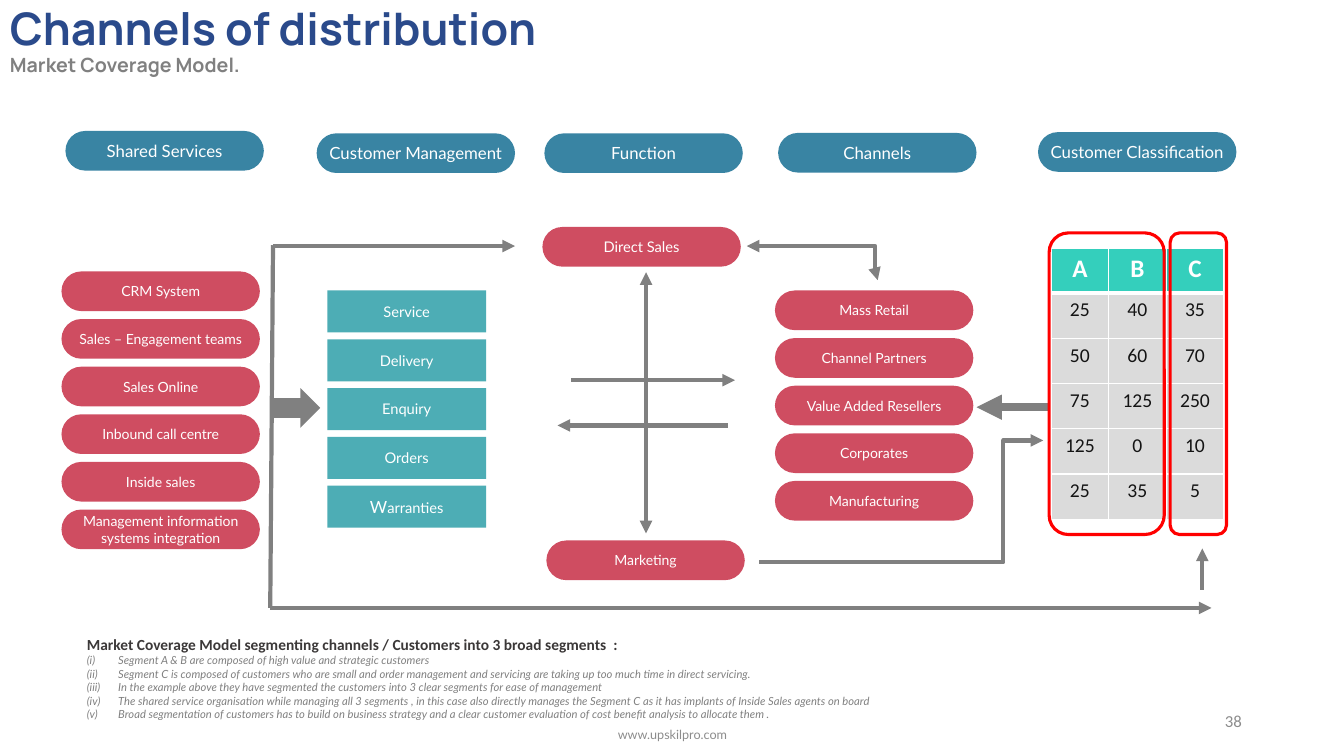
from lxml import etree
from pptx import Presentation
from pptx.dml.color import RGBColor
from pptx.enum.shapes import MSO_CONNECTOR, MSO_SHAPE
from pptx.enum.text import MSO_ANCHOR, PP_ALIGN
from pptx.oxml.ns import qn
from pptx.util import Cm, Pt

LEFT, CENTER, RIGHT = PP_ALIGN.LEFT, PP_ALIGN.CENTER, PP_ALIGN.RIGHT
TOP, MIDDLE = MSO_ANCHOR.TOP, MSO_ANCHOR.MIDDLE
ROUNDED, RECT, BLOCK_ARROW = (MSO_SHAPE.ROUNDED_RECTANGLE, MSO_SHAPE.RECTANGLE,
                              MSO_SHAPE.RIGHT_ARROW)
STRAIGHT, ELBOW = MSO_CONNECTOR.STRAIGHT, MSO_CONNECTOR.ELBOW

# Content (lengths in cm)
TITLE = "Channels of distribution"
SUBTITLE = "Market Coverage Model."
HEADERS = [("Shared Services", 1.65, 3.3), ("Customer Management", 7.98, 3.36),
           ("Function", 13.72, 3.36), ("Channels", 19.61, 3.35),
           ("Customer Classification", 26.16, 3.33)]
SERVICES = ["CRM System", "Sales – Engagement teams", "Sales Online",
            "Inbound call centre", "Inside sales",
            "Management information systems integration"]
CHANNELS = ["Mass Retail", "Channel Partners", "Value Added Resellers",
            "Corporates", "Manufacturing"]
MANAGEMENT = [["Service"], ["Delivery"], ["Enquiry"], ["Orders"], ["W", "arranties"]]
CLASSES = [["A", "B", "C"], [25, 40, 35], [50, 60, 70], [75, 125, 250],
           [125, 0, 10], [25, 35, 5]]
SEGMENT_FRAMES = [(26.44, 2.9), (29.49, 1.42)]  # left, width
NOTES_HEAD = "Market Coverage Model segmenting channels / Customers into 3 broad segments  :"
NOTES = [
    "Segment A & B are composed of high value and strategic customers",
    "Segment C is composed of customers who are small and order management and "
    "servicing are taking up too much time in direct servicing.",
    "In the example above they have segmented the customers into 3 clear segments "
    "for ease of management",
    "The shared service organisation while managing all 3 segments , in this case also "
    "directly manages the Segment C as it has implants of Inside Sales agents on board",
    "Broad segmentation of customers has to build on business strategy and a clear "
    "customer evaluation of cost benefit analysis to allocate them .",
]
# start, end, arrowheads, width in points
LINES = [
    ((6.88, 6.18), (6.81, 15.32), "", 3),
    ((6.88, 6.2), (12.98, 6.2), "tail", 3),
    ((6.81, 15.32), (30.53, 15.32), "tail", 3),
    ((18.34, 10.72), (14.05, 10.72), "tail", 3),
    ((14.4, 9.58), (18.52, 9.58), "tail", 3),
    ((16.28, 13.44), (16.28, 6.86), "head tail", 3),
    ((30.3, 14.86), (30.3, 13.82), "tail", 3),
    ((26.44, 10.26), (24.61, 10.26), "tail", 6),
]
# start, end, arrowheads, place of the bend
ELBOWS = [
    ((18.82, 6.2), (22.12, 7.06), "head tail", 0.98),
    ((19.13, 14.17), (26.29, 11.1), "tail", 0.86),
]

# Theme
FILL = dict(header="3984A3", pill="CF4D61", box="4DADB5", arrow="808080",
            frame="FF0000", class_head="23CBB7", class_cell="D9D9D9", white="FFFFFF")
TYPE = dict(
    title=dict(name="Manrope", size=32, color="2A4A8B", bold=True),
    subtitle=dict(name="Manrope", size=14, color="808080", bold=True),
    header=dict(name="Lato", size=12, color="FFFFFF"),
    pill=dict(name="Lato", size=10, color="FFFFFF"),
    box=dict(name="Lato", size=10.5, color="FFFFFF"),
    class_head=dict(name="Calibri", size=18, color="FFFFFF", bold=True),
    class_cell=dict(name="Calibri", size=14, color="000000", bold=False),
    notes_head=dict(name="Calibri", size=11, color="3B3838", bold=True),
    note=dict(name="Lato", size=8, color="808080", italic=True),
    number=dict(name="Calibri", size=12, color="8C8C8C"),
    footer=dict(name="Lato", size=9, color="8C8C8C"),
)
PILL_W, PILL_H, PILL_STEP = 5, 1, 1.2
BOX_W, BOX_H, BOX_STEP = 4, 1.06, 1.23

prs = Presentation()
prs.slide_width, prs.slide_height = Cm(33.87), Cm(19.05)
slide = prs.slides.add_slide(prs.slide_layouts[6])
shapes = slide.shapes


def rgb(name):
    return RGBColor.from_string(FILL[name])


def add_run(p, text, style, align=LEFT):
    p.alignment = align
    r = p.add_run()
    r.text = str(text)
    for key, value in TYPE[style].items():
        if key == "color":
            r.font.color.rgb = RGBColor.from_string(value)
        else:
            setattr(r.font, key, Pt(value) if key == "size" else value)
    return r


def add_shape(kind, x, y, w, h, fill):
    sp = shapes.add_shape(kind, Cm(x), Cm(y), Cm(w), Cm(h))
    sp.shadow.inherit = False
    sp.fill.solid()
    sp.fill.fore_color.rgb = rgb(fill)
    sp.line.fill.background()
    return sp


def add_label(kind, x, y, w, h, style, parts):
    sp = add_shape(kind, x, y, w, h, style)
    tf = sp.text_frame
    tf.word_wrap, tf.vertical_anchor = True, MIDDLE
    if kind == ROUNDED:
        sp.adjustments[0] = 0.5
    if style != "pill":
        tf.margin_left = tf.margin_right = tf.margin_top = tf.margin_bottom = 0
    return [add_run(tf.paragraphs[0], part, style, CENTER) for part in parts]


def add_pill(x, y, text, style="pill"):
    return add_label(ROUNDED, x, y, PILL_W, PILL_H, style, [text])


def add_text(x, y, w, h, lines, align=LEFT, anchor=TOP):
    tf = shapes.add_textbox(Cm(x), Cm(y), Cm(w), Cm(h)).text_frame
    tf.word_wrap, tf.vertical_anchor = True, anchor
    for i, (text, style) in enumerate(lines):
        p = tf.paragraphs[0] if i == 0 else tf.add_paragraph()
        add_run(p, text, style, align)
    return tf.paragraphs


def add_line(kind, start, end, heads, width):
    c = shapes.add_connector(kind, *(Cm(v) for v in start + end))
    c.line.color.rgb, c.line.width = rgb("arrow"), Pt(width)
    for head in heads.split():
        etree.SubElement(c.line._get_or_add_ln(), qn(f"a:{head}End"), type="triangle")
    sp_pr = c._element.spPr
    etree.SubElement(sp_pr, qn("a:effectLst"))
    return sp_pr


# Title
for p in add_text(0, 0.05, 15.9, 2.24, [(TITLE, "title"), (SUBTITLE, "subtitle")]):
    p.line_spacing = 0.9

# Column headers and pills
for text, x, y in HEADERS:
    add_pill(x, y, text, "header")
for x, y, names in [(1.55, 6.84, SERVICES), (19.53, 7.32, CHANNELS)]:
    for i, text in enumerate(names):
        add_pill(x, y + i * PILL_STEP, text)
direct_sales, = add_pill(13.67, 5.72, "Direct Sales")
direct_sales.font.size = Pt(10.5)
add_pill(13.77, 13.62, "Marketing")

# Customer management boxes
for i, parts in enumerate(MANAGEMENT):
    runs = add_label(RECT, 8.25, 7.32 + i * BOX_STEP, BOX_W, BOX_H, "box", parts)
    if len(runs) > 1:
        runs[0].font.size = Pt(12)

# Arrows
add_shape(BLOCK_ARROW, 6.88, 9.78, 1.19, 1, "arrow")
for line in LINES:
    add_line(STRAIGHT, *line)
for start, end, heads, bend in ELBOWS:
    guides = add_line(ELBOW, start, end, heads, 3).find(qn("a:prstGeom")).get_or_add_avLst()
    etree.SubElement(guides, qn("a:gd"), name="adj1", fmla=f"val {round(bend * 100000)}")

# Customer classification table
table = shapes.add_table(6, 3, Cm(26.49), Cm(6.25), Cm(4.35), Cm(6.84)).table
for col in table.columns:
    col.width = Cm(1.45)
for i, values in enumerate(CLASSES):
    table.rows[i].height = Cm(1.14)
    style = "class_cell" if i else "class_head"
    for j, value in enumerate(values):
        cell = table.cell(i, j)
        add_run(cell.text_frame.paragraphs[0], value, style, CENTER)
        tc_pr = cell._tc.get_or_add_tcPr()
        for side in ("lnL", "lnR", "lnT", "lnB"):
            thick = (i, side) in [(0, "lnB"), (1, "lnT")]
            ln = etree.SubElement(tc_pr, qn(f"a:{side}"), w=str(Pt(3 if thick else 1)))
            solid = etree.SubElement(ln, qn("a:solidFill"))
            etree.SubElement(solid, qn("a:srgbClr"), val=FILL["white"])
        cell.fill.solid()
        cell.fill.fore_color.rgb = rgb(style)

# Segment frames
for x, w in SEGMENT_FRAMES:
    sp = add_shape(ROUNDED, x, 5.87, w, 7.6, "white")
    color = sp._element.spPr.find(qn("a:solidFill"))[0]
    etree.SubElement(color, qn("a:alpha"), val="8000")
    sp.line.color.rgb, sp.line.width = rgb("frame"), Pt(2.25)

# Notes, page number and footer
notes = add_text(1.94, 15.88, 26.75, 2.44,
                 [(NOTES_HEAD, "notes_head")] + [(text, "note") for text in NOTES])
for p in notes[1:]:
    p_pr = p._p.get_or_add_pPr()
    p_pr.set("marL", str(Cm(0.79)))
    p_pr.set("indent", str(-Cm(0.79)))
    etree.SubElement(p_pr, qn("a:buAutoNum"), type="romanLcParenBoth")
add_text(23.93, 17.65, 7.62, 1.02, [("38", "number")], RIGHT, MIDDLE)
add_text(11.23, 18.01, 11.43, 1.02, [("www.upskilpro.com", "footer")], CENTER, MIDDLE)

prs.save("out.pptx")
